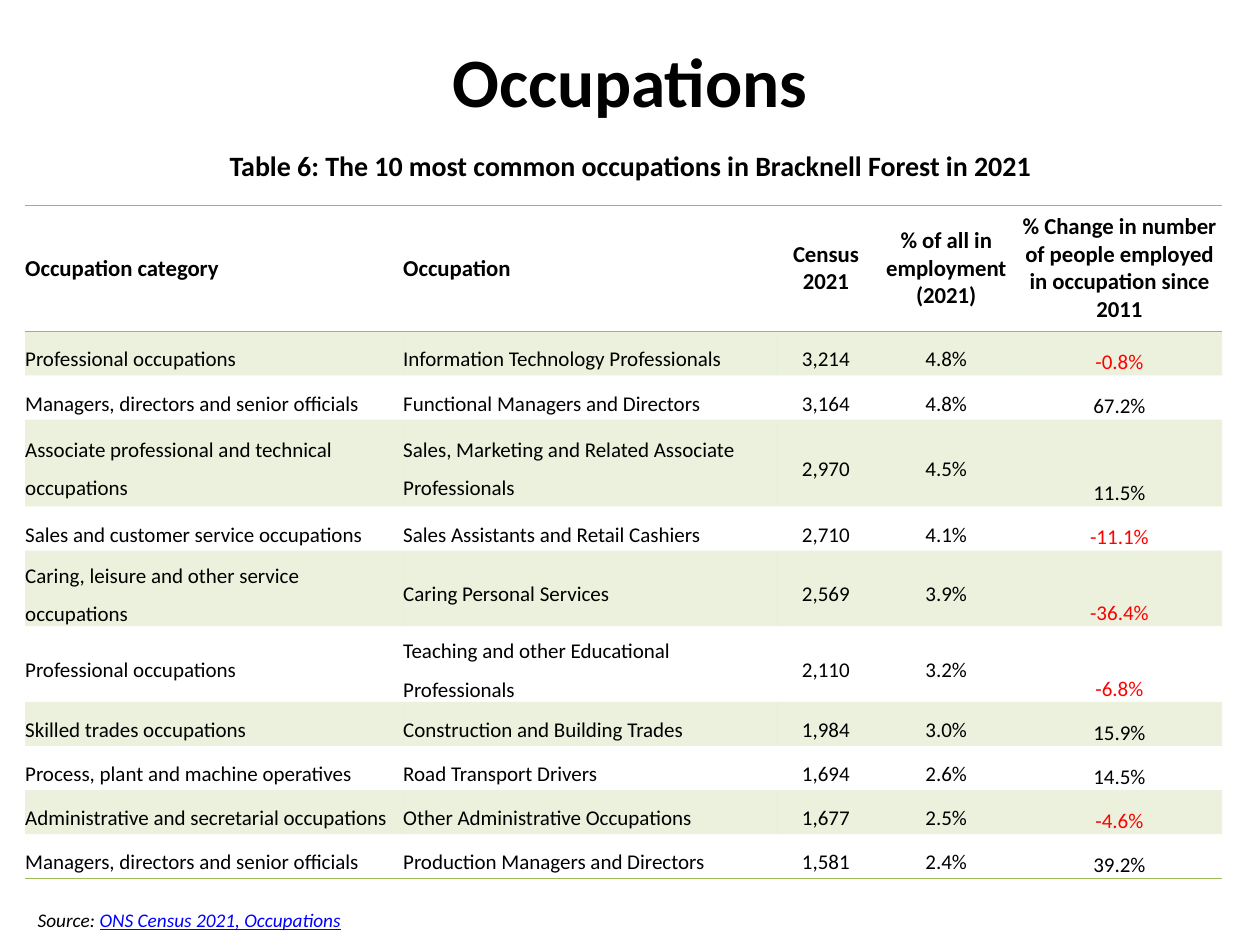
import pptx
import pptx.util
import pptx.dml.color
import pptx.enum.text
import pptx.oxml
import pptx.oxml.ns

Inches, Pt = pptx.util.Inches, pptx.util.Pt
RGB = pptx.dml.color.RGBColor
ANCHOR = pptx.enum.text.MSO_ANCHOR
ALIGN = pptx.enum.text.PP_ALIGN
FIT = pptx.enum.text.MSO_AUTO_SIZE

BLACK = RGB(0x00, 0x00, 0x00)
RED = RGB(0xFF, 0x00, 0x00)
BLUE = RGB(0x00, 0x00, 0xFF)
GREEN = RGB(0x9B, 0xBB, 0x59)
NO_GRID = "{2D5ABB26-0587-4C30-8999-92F81FD0307C}"

HEADS = ["Occupation category", "Occupation", "Census 2021",
         "% of all in employment (2021)",
         "% Change in number of people employed in occupation since 2011"]
JOBS = [
    ("Professional occupations", "Information Technology Professionals",
     "3,214", "4.8%", "-0.8%"),
    ("Managers, directors and senior officials",
     "Functional Managers and Directors", "3,164", "4.8%", "67.2%"),
    ("Associate professional and technical occupations",
     "Sales, Marketing and Related Associate Professionals",
     "2,970", "4.5%", "11.5%"),
    ("Sales and customer service occupations",
     "Sales Assistants and Retail Cashiers", "2,710", "4.1%", "-11.1%"),
    ("Caring, leisure and other service occupations",
     "Caring Personal Services", "2,569", "3.9%", "-36.4%"),
    ("Professional occupations",
     "Teaching and other Educational Professionals",
     "2,110", "3.2%", "-6.8%"),
    ("Skilled trades occupations", "Construction and Building Trades",
     "1,984", "3.0%", "15.9%"),
    ("Process, plant and machine operatives", "Road Transport Drivers",
     "1,694", "2.6%", "14.5%"),
    ("Administrative and secretarial occupations",
     "Other Administrative Occupations", "1,677", "2.5%", "-4.6%"),
    ("Managers, directors and senior officials",
     "Production Managers and Directors", "1,581", "2.4%", "39.2%"),
]
WIDTHS = [3, 2.96, 0.79, 1.12, 1.63]
HEIGHTS = [1, 0.35, 0.35, 0.69, 0.35, 0.6, 0.6, 0.35, 0.35, 0.35, 0.35]


def write(para, text, size, color=BLACK, bold=False, italic=False):
    run = para.add_run()
    run.text = text
    font = run.font
    font.name, font.size = "Calibri", Pt(size)
    font.bold, font.italic = bold, italic
    font.color.rgb = color
    return run


def rule(cell, side):
    """Draw a green line on one side of a cell: T or B."""
    cell._tc.get_or_add_tcPr().append(pptx.oxml.parse_xml(
        f'<a:ln{side} {pptx.oxml.ns.nsdecls("a")} w="12700"><a:solidFill>'
        f'<a:srgbClr val="{GREEN}"/></a:solidFill></a:ln{side}>'))


deck = pptx.Presentation()
deck.slide_width, deck.slide_height = Inches(10), Inches(7.5)
slide = deck.slides.add_slide(deck.slide_layouts[5])

title = slide.shapes.title
title.left, title.top = Inches(0.69), Inches(0.32)
title.width, title.height = Inches(8.62), Inches(0.7)
frame = title.text_frame
frame.auto_size = FIT.NONE
frame.vertical_anchor = ANCHOR.BOTTOM
para = frame.paragraphs[0]
para.alignment, para.line_spacing = ALIGN.CENTER, 0.9
write(para, "Occupations", 39.6, bold=True)

label = slide.shapes.add_textbox(
    Inches(0.91), Inches(1.13), Inches(8.19), Inches(0.37))
label.text_frame.word_wrap = True
para = label.text_frame.paragraphs[0]
para.alignment = ALIGN.CENTER
write(para, "Table 6: The 10 most common occupations in Bracknell Forest in 2021",
      16, bold=True)

rows = [HEADS, *JOBS]
table = slide.shapes.add_table(
    len(rows), len(HEADS), Inches(0.2), Inches(1.63),
    Inches(sum(WIDTHS)), Inches(sum(HEIGHTS))).table
table._tbl.tblPr.find(pptx.oxml.ns.qn("a:tableStyleId")).text = NO_GRID
table.first_row = table.horz_banding = False
for col, width in zip(table.columns, WIDTHS):
    col.width = Inches(width)
for row, height in zip(table.rows, HEIGHTS):
    row.height = Inches(height)

for r, row in enumerate(rows):
    head = r == 0
    for c, text in enumerate(row):
        cell = table.cell(r, c)
        change = c == 4 and not head
        edge = Inches(0.01 if change else 0)
        cell.margin_left = cell.margin_right = cell.margin_top = edge
        cell.margin_bottom = 0
        cell.vertical_anchor = ANCHOR.BOTTOM if change else ANCHOR.MIDDLE
        if head:
            rule(cell, "T")
        if head or r == len(JOBS):
            rule(cell, "B")
        if r % 2:
            cell.fill.solid()
            cell.fill.fore_color.rgb = GREEN
            tint = cell._tc.tcPr.find(".//" + pptx.oxml.ns.qn("a:srgbClr"))
            tint.append(pptx.oxml.parse_xml(
                f'<a:alpha {pptx.oxml.ns.nsdecls("a")} val="20000"/>'))
        else:
            cell.fill.background()
        para = cell.text_frame.paragraphs[0]
        para.alignment = ALIGN.CENTER if c > 1 else ALIGN.LEFT
        if not head and not change:
            para.line_spacing = 1.5
        write(para, text, 13 if head else 12,
              RED if text.startswith("-") else BLACK, bold=head)

source = slide.shapes.add_textbox(
    Inches(0.2), Inches(7.16), Inches(4.09), Inches(0.29))
source.text_frame.word_wrap = True
para = source.text_frame.paragraphs[0]
write(para, "Source: ", 11, italic=True)
link = write(para, "ONS Census 2021, Occupations", 11, BLUE, italic=True)
link.font.underline = True

deck.save("out.pptx")
